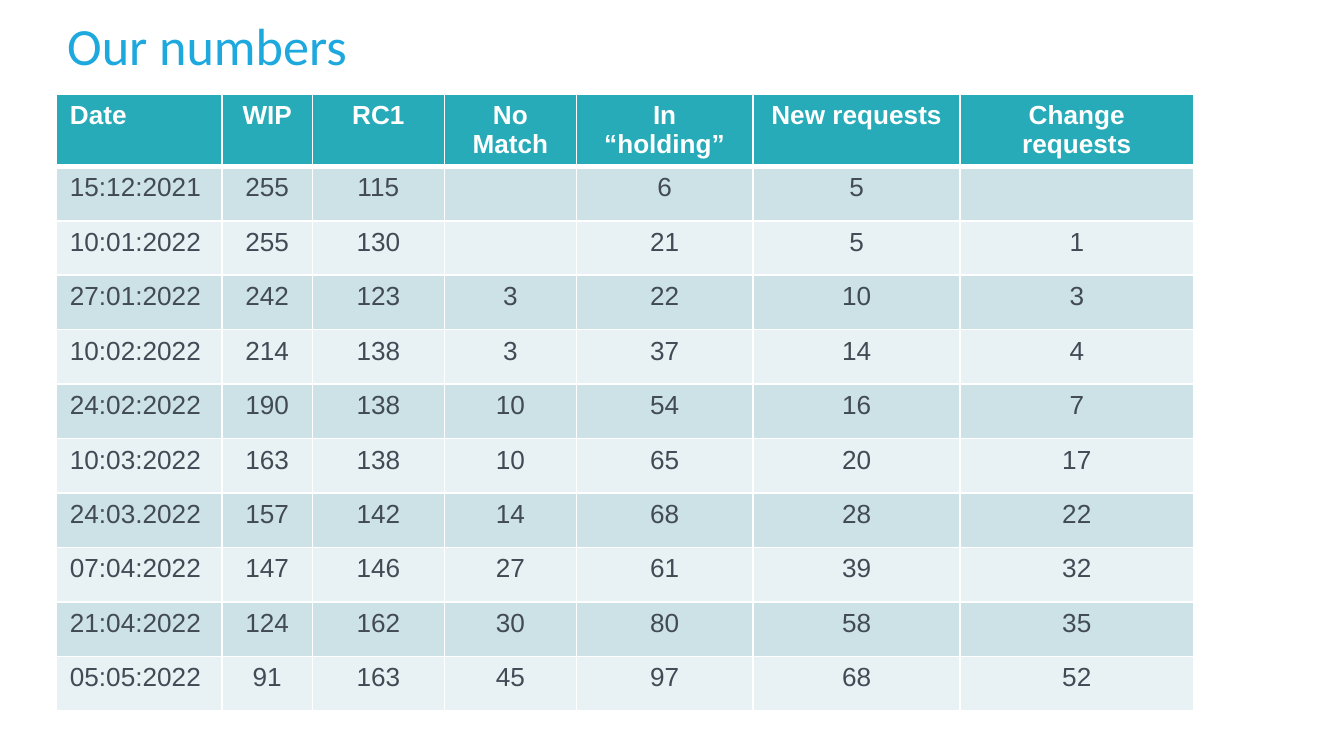
from dataclasses import dataclass
from lxml.etree import SubElement
from pptx import Presentation
from pptx.dml.color import RGBColor
from pptx.enum.text import MSO_ANCHOR, PP_ALIGN
from pptx.oxml.ns import qn
from pptx.util import Inches, Pt


@dataclass(frozen=True)
class Theme:
    title: str = "1DA8DE"
    head: str = "27ABB8"
    bands: tuple = ("CDE2E6", "E8F1F3")
    ink: str = "424A55"
    white: str = "FFFFFF"
    title_font: str = "Calibri"
    font: str = "Arial"
    title_size: int = 28
    size: int = 14


THEME = Theme()
WIDE = Inches(10)
HIGH = WIDE * 9 // 16
LEFT, TOP = Inches(0.42), Inches(0.7)
GRID_WIDE, GRID_HIGH = Inches(8.46), Inches(4.46)
SHARES = (1.23, 0.67, 0.98, 0.98, 1.31, 1.54, 1.73)
HEAD = ("Date", "WIP", "RC1", "No Match", "In “holding”",
        "New requests", "Change requests")
ROWS = (
    ("15:12:2021", 255, 115, "", 6, 5, ""),
    ("10:01:2022", 255, 130, "", 21, 5, 1),
    ("27:01:2022", 242, 123, 3, 22, 10, 3),
    ("10:02:2022", 214, 138, 3, 37, 14, 4),
    ("24:02:2022", 190, 138, 10, 54, 16, 7),
    ("10:03:2022", 163, 138, 10, 65, 20, 17),
    ("24:03.2022", 157, 142, 14, 68, 28, 22),
    ("07:04:2022", 147, 146, 27, 61, 39, 32),
    ("21:04:2022", 124, 162, 30, 80, 58, 35),
    ("05:05:2022", 91, 163, 45, 97, 68, 52),
)


def set_font(font, name, size, color, bold=False):
    font.name, font.size, font.bold = name, Pt(size), bold
    font.color.rgb = RGBColor.from_string(color)


def add_title(slide, text):
    title = slide.shapes.title
    title.left, title.top = LEFT, 0
    title.width, title.height = Inches(8.62), Inches(0.73)
    frame = title.text_frame
    frame.text = text
    frame.word_wrap = True
    frame.vertical_anchor = MSO_ANCHOR.MIDDLE
    frame.margin_left = frame.margin_right = Inches(0.08)
    frame.margin_top = frame.margin_bottom = Inches(0.04)
    para = frame.paragraphs[0]
    para.alignment = PP_ALIGN.LEFT
    para.line_spacing = 0.9
    set_font(para.runs[0].font, THEME.title_font, THEME.title_size, THEME.title)


def set_borders(cell, top, bottom):
    """Draw white cell edges; they must precede the fill in the XML."""
    props = cell._tc.get_or_add_tcPr()
    for side, width in (("L", 1), ("R", 1), ("T", top), ("B", bottom)):
        line = SubElement(props, qn(f"a:ln{side}"), w=str(Pt(width)))
        fill = SubElement(line, qn("a:solidFill"))
        SubElement(fill, qn("a:srgbClr"), val=THEME.white)


def style_cell(cell, row, col):
    is_head = row == 0
    set_borders(cell, 3 if row == 1 else 1, 3 if is_head else 1)
    cell.fill.solid()
    color = THEME.head if is_head else THEME.bands[(row - 1) % 2]
    cell.fill.fore_color.rgb = RGBColor.from_string(color)
    para = cell.text_frame.paragraphs[0]
    para.alignment = PP_ALIGN.CENTER if col else PP_ALIGN.LEFT
    ink = THEME.white if is_head else THEME.ink
    set_font(para.font, THEME.font, THEME.size, ink, is_head)
    for run in para.runs:
        set_font(run.font, THEME.font, THEME.size, ink, is_head)


def add_grid(slide, data):
    table = slide.shapes.add_table(
        len(data), len(SHARES), LEFT, TOP, GRID_WIDE, GRID_HIGH).table
    for column, share in zip(table.columns, SHARES):
        column.width = int(GRID_WIDE * share / sum(SHARES))
    for r, values in enumerate(data):
        for c, value in enumerate(values):
            cell = table.cell(r, c)
            cell.text = str(value)
            style_cell(cell, r, c)


def main():
    deck = Presentation()
    deck.slide_width, deck.slide_height = WIDE, HIGH
    slide = deck.slides.add_slide(deck.slide_layouts[5])
    add_title(slide, "Our numbers")
    add_grid(slide, (HEAD, *ROWS))
    deck.save("out.pptx")


if __name__ == "__main__":
    main()
